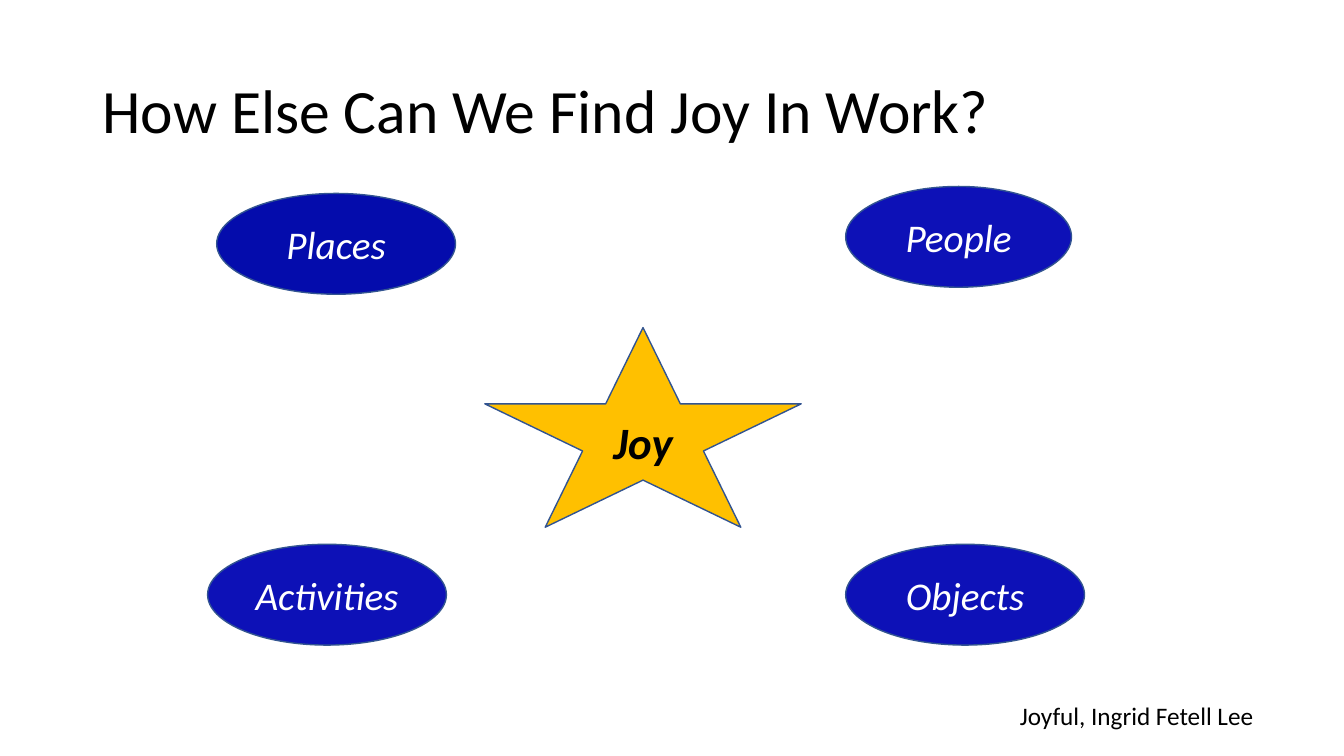
from pptx import Presentation
from pptx.dml.color import RGBColor
from pptx.enum.shapes import MSO_SHAPE
from pptx.enum.text import MSO_ANCHOR, MSO_AUTO_SIZE, PP_ALIGN
from pptx.util import Pt

COLORS = {
    "text": "000000",
    "light": "FFFFFF",
    "star": "FFC000",
    "deep blue": "040CAC",
    "blue": "0D11B7",
    "outline": "325491",
}


def add_run(paragraph, text, size, color, bold=False, italic=False):
    run = paragraph.add_run()
    run.text = text
    run.font.name = "Calibri"
    run.font.size = Pt(size)
    run.font.bold = bold
    run.font.italic = italic
    run.font.color.rgb = RGBColor.from_string(COLORS[color])


prs = Presentation()
prs.slide_width, prs.slide_height = Pt(960), Pt(540)
slide = prs.slides.add_slide(prs.slide_layouts[5])

# Title
title = slide.shapes.title
title.left, title.top, title.width, title.height = Pt(66), Pt(28.8), Pt(828), Pt(104.4)
title.text_frame.word_wrap = True
title.text_frame.vertical_anchor = MSO_ANCHOR.MIDDLE
heading = title.text_frame.paragraphs[0]
heading.alignment = PP_ALIGN.LEFT
heading.line_spacing = 0.9
add_run(heading, "How Else Can We Find Joy In Work?", 44, "text")

# Joy in the centre, its four sources around it
star, oval = MSO_SHAPE.STAR_5_POINT, MSO_SHAPE.OVAL
ideas = [
    # text, outline, left, top, width, height, fill, text colour, size, bold
    ("Joy", star, 346.3, 234, 226, 142.6, "star", "text", 32, True),
    ("Places", oval, 154.8, 138.2, 170.6, 72, "deep blue", "light", 28, False),
    ("Activities", oval, 148.3, 388.8, 170.6, 72, "blue", "light", 28, False),
    ("People", oval, 604.1, 133.2, 161.3, 72, "blue", "light", 28, False),
    ("Objects", oval, 604.1, 388.8, 170.6, 72, "blue", "light", 28, False),
]
for text, preset, left, top, width, height, fill, color, size, bold in ideas:
    idea = slide.shapes.add_shape(preset, Pt(left), Pt(top), Pt(width), Pt(height))
    idea.shadow.inherit = False
    idea.fill.solid()
    idea.fill.fore_color.rgb = RGBColor.from_string(COLORS[fill])
    idea.line.color.rgb = RGBColor.from_string(COLORS["outline"])
    idea.line.width = Pt(1)
    idea.text_frame.word_wrap = True
    idea.text_frame.vertical_anchor = MSO_ANCHOR.MIDDLE
    label = idea.text_frame.paragraphs[0]
    label.alignment = PP_ALIGN.CENTER
    add_run(label, text, size, color, bold, italic=True)

# Book credit
credit = slide.shapes.add_textbox(Pt(721.4), Pt(496.8), Pt(183.6), Pt(28.8))
credit.text_frame.word_wrap = False
credit.text_frame.auto_size = MSO_AUTO_SIZE.SHAPE_TO_FIT_TEXT
add_run(credit.text_frame.paragraphs[0], "Joyful, Ingrid Fetell Lee", 18, "text")

prs.save("out.pptx")
